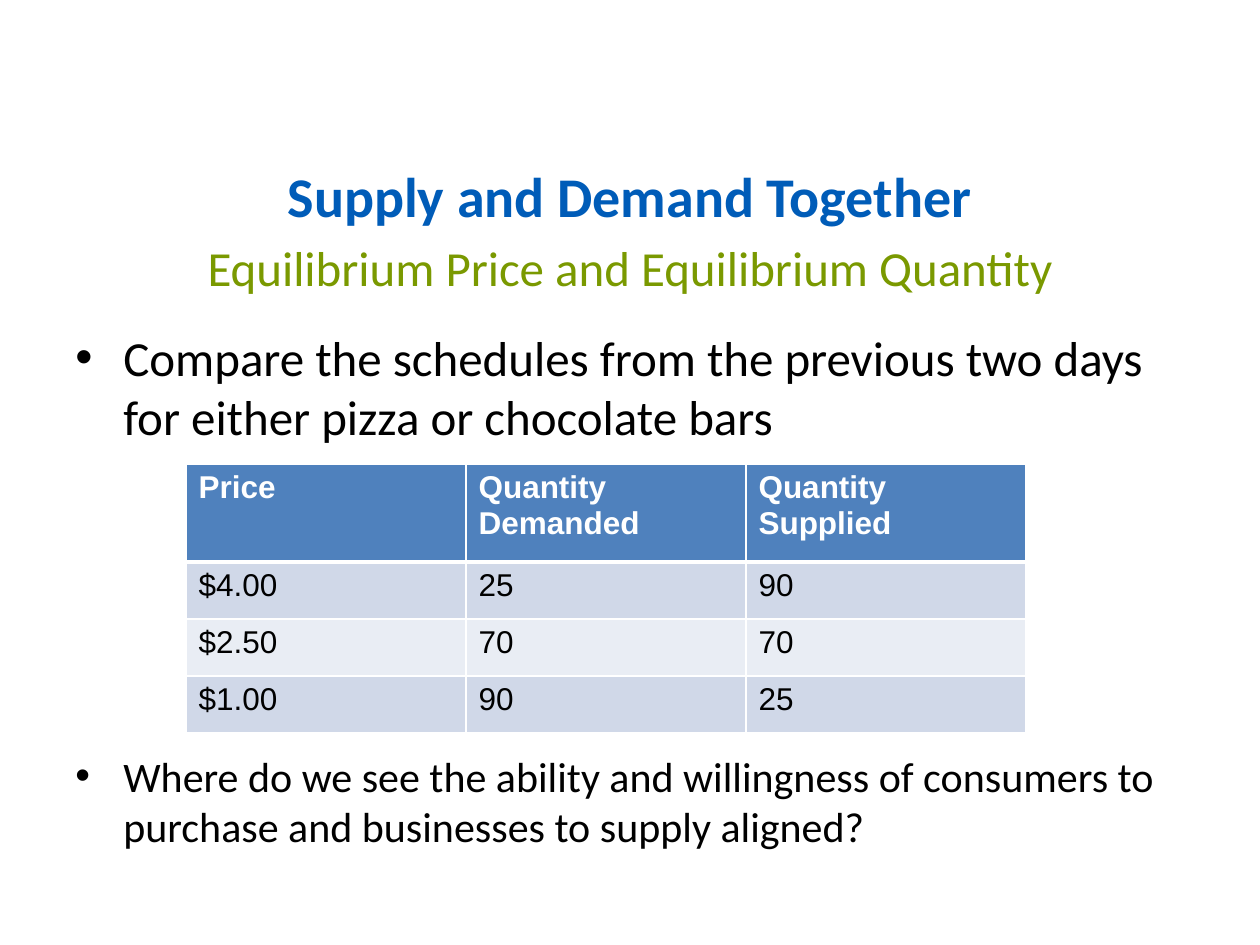
import pptx
import pptx.dml.color
import pptx.enum.text
import pptx.oxml.ns
import pptx.util
import lxml.etree

PX = 914400 / 126
COLORS = {"title": "005CB8", "subtitle": "7A9900", "text": "000000", "white": "FFFFFF",
          "header": "4F81BD", "odd": "D0D8E8", "even": "E9EDF4"}
ALIGN = pptx.enum.text.PP_ALIGN
ANCHOR = pptx.enum.text.MSO_ANCHOR
qn = pptx.oxml.ns.qn


def px(length):
    return pptx.util.Emu(round(length * PX))


def write(para, text, size, color="text", font="Calibri", bold=False,
          align=ALIGN.LEFT, bullet=False, after=0, line=None):
    para.alignment = align
    para.space_after = pptx.util.Pt(after)
    if line:
        para.line_spacing = pptx.util.Pt(line)
    if bullet:
        props = para._p.get_or_add_pPr()
        props.set("marL", str(px(48)))
        props.set("indent", str(-px(48)))
        lxml.etree.SubElement(props, qn("a:buFont")).set("typeface", "Arial")
        lxml.etree.SubElement(props, qn("a:buChar")).set("char", "•")
    span = para.add_run()
    span.text = text
    span.font.name = font
    span.font.size = pptx.util.Pt(size)
    span.font.bold = bold
    span.font.color.rgb = pptx.dml.color.RGBColor.from_string(COLORS[color])


deck = pptx.Presentation()
deck.slide_width, deck.slide_height = px(1260), px(945)
page = deck.slides.add_slide(deck.slide_layouts[6])

# Text boxes: top, height, anchor, paragraphs
boxes = [
    (126, 105, ANCHOR.MIDDLE, [
        ("Supply and Demand Together",
         dict(size=32, color="title", bold=True, align=ALIGN.CENTER, line=57))]),
    (231, 225, ANCHOR.TOP, [
        ("Equilibrium Price and Equilibrium Quantity",
         dict(size=28, color="subtitle", align=ALIGN.CENTER, after=18)),
        ("Compare the schedules from the previous two days for either pizza or chocolate bars",
         dict(size=28, bullet=True))]),
    (744, 120, ANCHOR.TOP, [
        ("Where do we see the ability and willingness of consumers to purchase "
         "and businesses to supply aligned?", dict(size=24, bullet=True))]),
]
for top, height, anchor, lines in boxes:
    frame = page.shapes.add_textbox(px(63), px(top), px(1134), px(height)).text_frame
    frame.word_wrap = True
    frame.vertical_anchor = anchor
    for index, (text, style) in enumerate(lines):
        para = frame.add_paragraph() if index else frame.paragraphs[0]
        write(para, text, **style)

# Supply and demand schedule
schedule = [
    ("Price", "Quantity Demanded", "Quantity Supplied"),
    ("$4.00", "25", "90"),
    ("$2.50", "70", "70"),
    ("$1.00", "90", "25"),
]
table = page.shapes.add_table(4, 3, px(186), px(464), px(840), px(269)).table
for column in table.columns:
    column.width = px(280)
for r, values in enumerate(schedule):
    is_header = r == 0
    table.rows[r].height = px(98 if is_header else 57)
    fill = "header" if is_header else "odd" if r % 2 else "even"
    for c, value in enumerate(values):
        cell = table.cell(r, c)
        cell.fill.solid()
        cell.fill.fore_color.rgb = pptx.dml.color.RGBColor.from_string(COLORS[fill])
        write(cell.text_frame.paragraphs[0], value, 18, font="Arial", bold=is_header,
              color="white" if is_header else "text")
        # White cell borders, thicker between header and body
        props = cell._tc.get_or_add_tcPr()
        for place, side in enumerate("LRTB"):
            thick = (r, side) in ((0, "B"), (1, "T"))
            border = lxml.etree.Element(qn("a:ln" + side))
            border.set("w", str(pptx.util.Pt(3 if thick else 1)))
            solid = lxml.etree.SubElement(border, qn("a:solidFill"))
            lxml.etree.SubElement(solid, qn("a:srgbClr")).set("val", COLORS["white"])
            props.insert(place, border)

deck.save("out.pptx")
